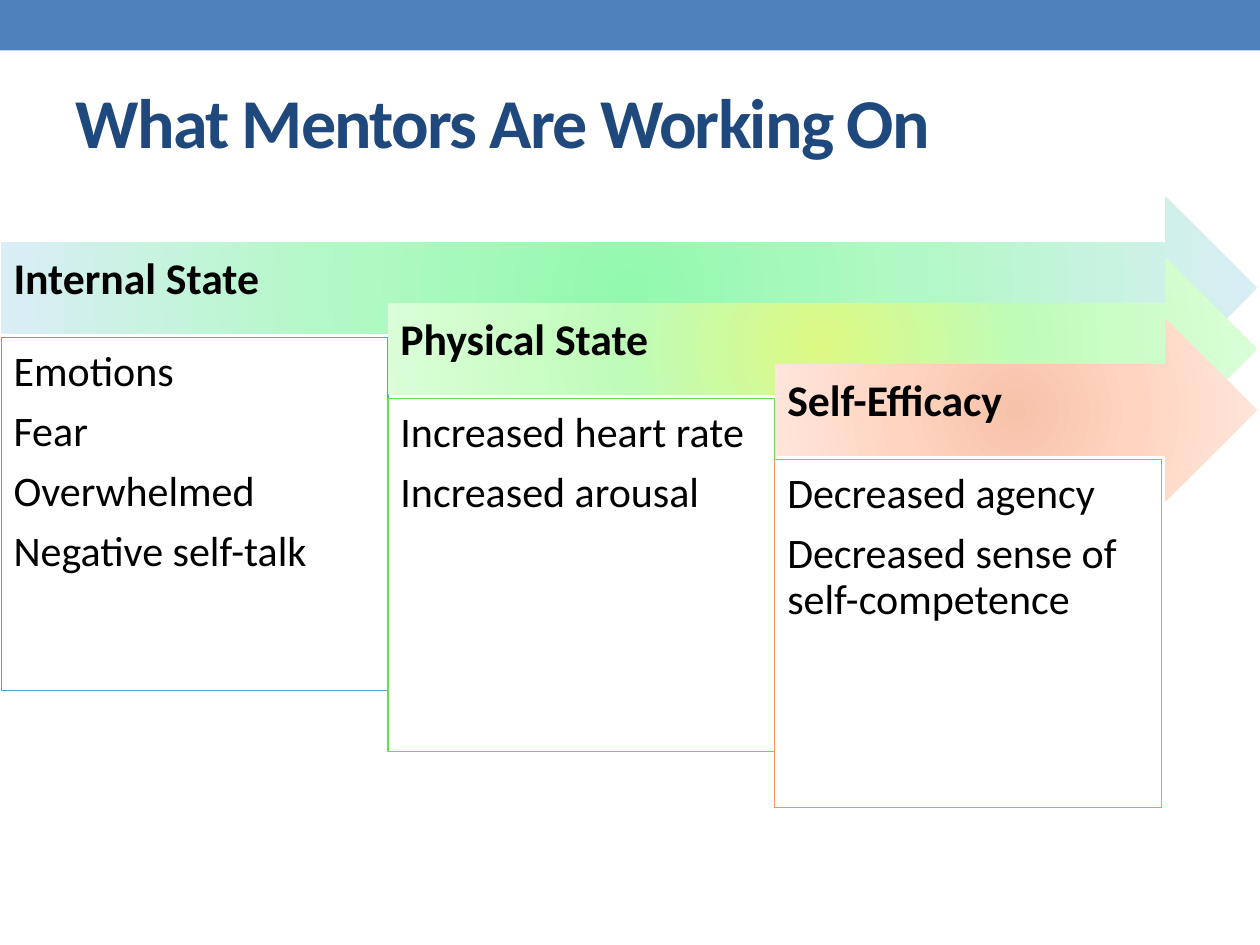
from dataclasses import dataclass

from lxml import etree
from pptx import Presentation
from pptx import util as u
from pptx.dml.color import RGBColor
from pptx.enum import shapes, text
from pptx.oxml import ns


@dataclass(frozen=True)
class Theme:
    font: str = "Calibri"
    bar: str = "4F81BD"
    title: str = "1F497D"
    ink: str = "000000"
    paper: str = "FFFFFF"
    title_size: int = 40
    head_size: int = 25
    body_size: int = 24


THEME = Theme()
WIDE, HIGH = 10, 7.5
LEFT, TOP = 0.01, 1.56          # corner of the first arrow
COL, STEP = 3.07, 0.485         # shift from one stage to the next
NECK, TIP = 9.25, 9.98          # arrow head, shared by all stages
ARROW = 1.45
DROP = 1.12                     # arrow top to box top

# heading, gradient stops, box outline, box height, items
STAGES = [
    ("Internal State", ("93F9AE", "B1F9C4", "DAEEF6"), "4BACC6", 2.8,
     ["Emotions", "Fear", "Overwhelmed", "Negative self-talk"]),
    ("Physical State", ("DDF983", "BFFCB9", "DBFED8"), "60E146", 2.8,
     ["Increased heart rate", "Increased arousal"]),
    ("Self-Efficacy", ("F6C2AA", "FFD4C0", "FFE7DD"), "F79646", 2.76,
     ["Decreased agency", "Decreased sense of self-competence"]),
]


def rgb(code):
    return RGBColor.from_string(code)


def add_run(para, words, size, color, bold=False):
    run = para.add_run()
    run.text = words
    font = run.font
    font.name, font.size, font.bold = THEME.font, u.Pt(size), bold
    font.color.rgb = rgb(color)
    return run


def set_frame(shape, insets, anchor):
    """Insets run left, top, right, bottom, in inches."""
    frame = shape.text_frame
    frame.word_wrap = True
    frame.vertical_anchor = anchor
    (frame.margin_left, frame.margin_top,
     frame.margin_right, frame.margin_bottom) = map(u.Inches, insets)
    return frame


def add_lines(frame, lines, size, bold=False):
    for num, words in enumerate(lines):
        para = frame.add_paragraph() if num else frame.paragraphs[0]
        para.alignment = text.PP_ALIGN.LEFT
        para.line_spacing = 0.9
        para.space_after = u.Pt(round(size * 0.35, 1))
        add_run(para, words, size, THEME.ink, bold)


def add_outline(slide, points):
    spots = [(u.Inches(x), u.Inches(y)) for x, y in points]
    pen = slide.shapes.build_freeform(*spots[0])
    pen.add_line_segments(spots[1:], close=True)
    shape = pen.convert_to_shape()
    shape.shadow.inherit = False
    return shape


def set_glow(shape, colors):
    """Fill with a round gradient that starts at the centre."""
    glow = etree.Element(ns.qn("a:gradFill"), rotWithShape="1")
    stops = etree.SubElement(glow, ns.qn("a:gsLst"))
    for pos, color in zip((0, 45, 100), colors):
        stop = etree.SubElement(stops, ns.qn("a:gs"), pos=str(pos * 1000))
        etree.SubElement(stop, ns.qn("a:srgbClr"), val=color)
    ring = etree.SubElement(glow, ns.qn("a:path"), path="circle")
    etree.SubElement(ring, ns.qn("a:fillToRect"),
                     {side: "50000" for side in "ltrb"})
    shape.element.spPr.find(ns.qn("a:custGeom")).addnext(glow)


def add_arrow(slide, x, y, head, colors):
    quart = ARROW / 4
    upper, mid, lower = (y + quart * n for n in (1, 2, 3))
    arrow = add_outline(slide, [
        (x, upper), (NECK, upper), (NECK, y), (TIP, mid),
        (NECK, y + ARROW), (NECK, lower), (x, lower)])
    set_glow(arrow, colors)
    arrow.line.fill.background()
    frame = set_frame(arrow, (0.1, 0.47, 0.64, 0.59), text.MSO_ANCHOR.MIDDLE)
    add_lines(frame, [head], THEME.head_size, bold=True)


def add_box(slide, x, y, high, edge, items):
    box = add_outline(slide, [
        (x, y), (x + COL, y), (x + COL, y + high), (x, y + high)])
    box.fill.solid()
    box.fill.fore_color.rgb = rgb(THEME.paper)
    box.line.color.rgb = rgb(edge)
    box.line.width = u.Pt(0.75)
    frame = set_frame(box, (0.1,) * 4, text.MSO_ANCHOR.TOP)
    add_lines(frame, items, THEME.body_size)


def add_bar(slide):
    bar = slide.shapes.add_shape(shapes.MSO_SHAPE.RECTANGLE, 0, 0,
                                 u.Inches(WIDE), u.Inches(0.4))
    bar.shadow.inherit = False
    bar.fill.solid()
    bar.fill.fore_color.rgb = rgb(THEME.bar)
    bar.line.fill.background()


def set_title(slide, words):
    title = slide.shapes.title
    title.left, title.top = u.Inches(WIDE * 0.05), u.Inches(0.42)
    title.width, title.height = u.Inches(WIDE * 0.9), u.Inches(1.08)
    frame = set_frame(title, (0.1, 0.05, 0.1, 0.05), text.MSO_ANCHOR.MIDDLE)
    para = frame.paragraphs[0]
    para.alignment = text.PP_ALIGN.LEFT
    run = add_run(para, words, THEME.title_size, THEME.title, bold=True)
    run.font._element.set("spc", "-100")


def main():
    deck = Presentation()
    deck.slide_width, deck.slide_height = u.Inches(WIDE), u.Inches(HIGH)
    slide = deck.slides.add_slide(deck.slide_layouts[5])
    add_bar(slide)
    set_title(slide, "What Mentors Are Working On")
    for num, (head, colors, edge, high, items) in enumerate(STAGES):
        x, y = LEFT + COL * num, TOP + STEP * num
        add_arrow(slide, x, y, head, colors)
        add_box(slide, x, y + DROP, high, edge, items)
    deck.save("out.pptx")


if __name__ == "__main__":
    main()
